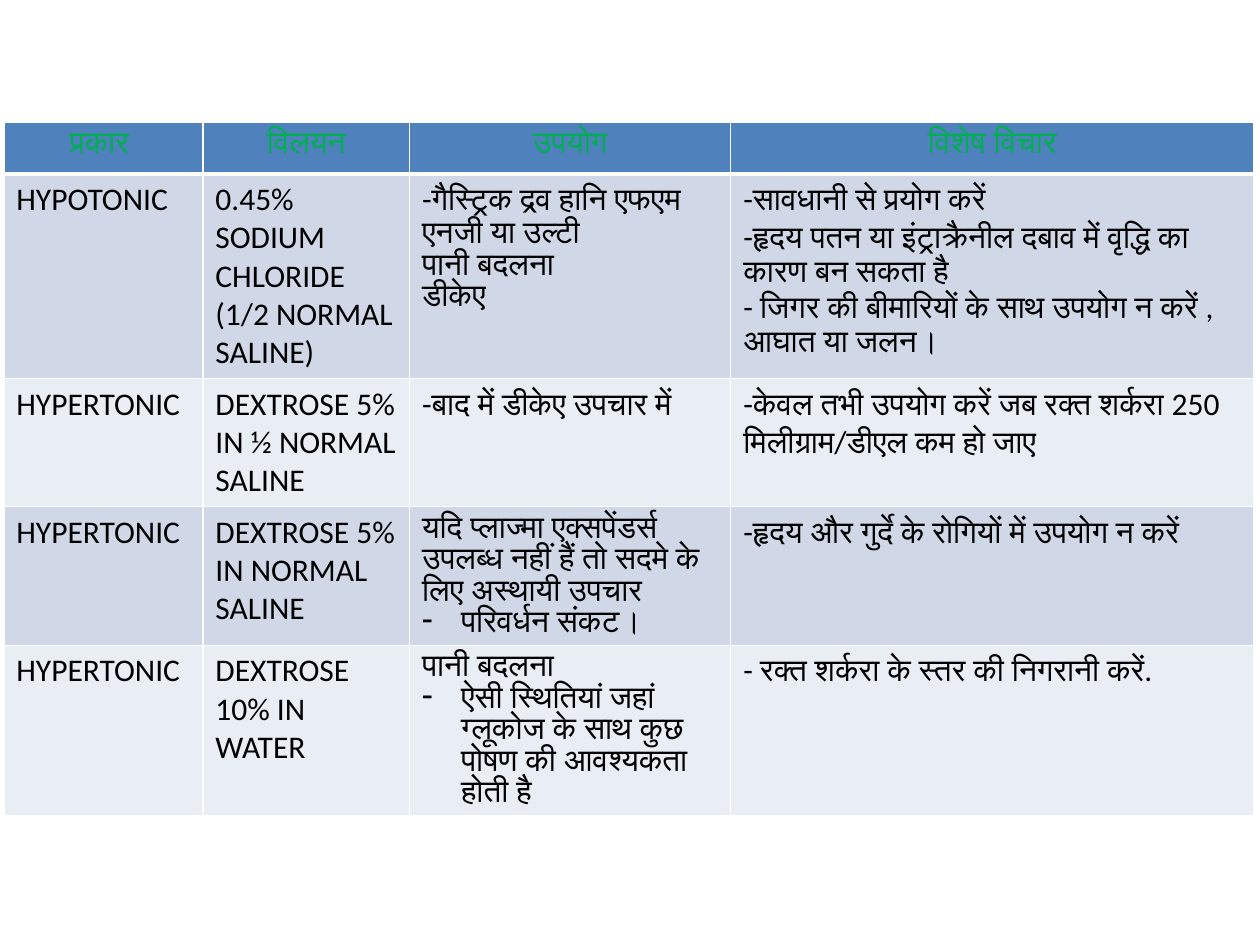
from dataclasses import dataclass

import lxml.etree
import pptx
import pptx.dml.color
import pptx.enum.text
import pptx.oxml
import pptx.oxml.ns
import pptx.util


@dataclass(frozen=True)
class Theme:
    font: str = "Calibri"
    size: int = 18
    header_text: str = "00B050"
    body_text: str = "000000"
    header_fill: str = "4F81BD"
    bands: tuple = ("D0D8E8", "E9EDF4")
    border: str = "FFFFFF"
    thin: int = 1
    thick: int = 3
    indent: float = 0.31


@dataclass(frozen=True)
class Bullet:
    text: str


HEADERS = ["प्रकार ", "विलयन", "उपयोग", "विशेष विचार"]
FLUIDS = [
    ["HYPOTONIC",
     "0.45% SODIUM CHLORIDE (1/2 NORMAL SALINE)",
     ["-गैस्ट्रिक द्रव हानि एफएम एनजी या उल्टी ", "पानी बदलना ", "डीकेए"],
     ["-सावधानी से प्रयोग करें",
      "-हृदय पतन या इंट्राक्रैनील दबाव में वृद्धि का कारण बन सकता है ",
      "- जिगर की बीमारियों के साथ उपयोग न करें , आघात या जलन।"]],
    ["HYPERTONIC",
     "DEXTROSE 5% IN ½ NORMAL SALINE",
     "-बाद में डीकेए उपचार में",
     "-केवल तभी उपयोग करें जब रक्त शर्करा 250 मिलीग्राम/डीएल कम हो जाए"],
    ["HYPERTONIC",
     "DEXTROSE 5% IN NORMAL SALINE",
     ["यदि प्लाज्मा एक्सपेंडर्स उपलब्ध नहीं हैं तो सदमे के लिए अस्थायी उपचार",
      Bullet("परिवर्धन संकट।")],
     "-हृदय और गुर्दे के रोगियों में उपयोग न करें"],
    ["HYPERTONIC",
     "DEXTROSE 10% IN WATER",
     ["पानी बदलना ",
      Bullet("ऐसी स्थितियां जहां ग्लूकोज के साथ कुछ पोषण की आवश्यकता होती है")],
     "- रक्त शर्करा के स्तर की निगरानी करें."],
]
COLUMN_WIDTHS = [1.58, 1.64, 2.55, 4.15]
ROW_HEIGHT = 0.41


class SlideBuilder:
    def __init__(self, presentation, theme):
        self.theme = theme
        self.slide = presentation.slides.add_slide(presentation.slide_layouts[6])

    def table(self, left, top, height, rows, column_widths, row_height):
        inches = pptx.util.Inches
        frame = self.slide.shapes.add_table(
            len(rows), len(column_widths), inches(left), inches(top),
            inches(sum(column_widths)), inches(height))
        for column, width in zip(frame.table.columns, column_widths):
            column.width = inches(width)
        for row_index, values in enumerate(rows):
            frame.table.rows[row_index].height = inches(row_height)
            for column_index, value in enumerate(values):
                self.cell(frame.table.cell(row_index, column_index), row_index, value)
        frame.height = inches(height)

    def cell(self, cell, row_index, value):
        theme = self.theme
        header = row_index == 0
        self.borders(cell, row_index)
        cell.fill.solid()
        fill = theme.header_fill if header else theme.bands[(row_index - 1) % 2]
        cell.fill.fore_color.rgb = pptx.dml.color.RGBColor.from_string(fill)
        items = value if isinstance(value, list) else [value]
        for index, item in enumerate(items):
            text_frame = cell.text_frame
            paragraph = text_frame.add_paragraph() if index else text_frame.paragraphs[0]
            self.paragraph(paragraph, item, header)

    def borders(self, cell, row_index):
        theme = self.theme
        properties = cell._tc.get_or_add_tcPr()
        widths = {
            "lnL": theme.thin,
            "lnR": theme.thin,
            "lnT": theme.thick if row_index == 1 else theme.thin,
            "lnB": theme.thick if row_index == 0 else theme.thin,
        }
        for side, width in widths.items():
            properties.append(pptx.oxml.parse_xml(
                f'<a:{side} {pptx.oxml.ns.nsdecls("a")} w="{pptx.util.Pt(width)}">'
                f'<a:solidFill><a:srgbClr val="{theme.border}"/></a:solidFill></a:{side}>'))

    def paragraph(self, paragraph, item, header):
        theme = self.theme
        text = item
        if isinstance(item, Bullet):
            text = item.text
            self.bullet(paragraph)
        if header:
            paragraph.alignment = pptx.enum.text.PP_ALIGN.CENTER
        run = paragraph.add_run()
        run.text = text
        run.font.name = theme.font
        run.font.size = pptx.util.Pt(theme.size)
        run.font.bold = False
        color = theme.header_text if header else theme.body_text
        run.font.color.rgb = pptx.dml.color.RGBColor.from_string(color)

    def bullet(self, paragraph):
        properties = paragraph._p.get_or_add_pPr()
        indent = pptx.util.Inches(self.theme.indent)
        properties.set("marL", str(indent))
        properties.set("indent", str(-indent))
        mark = lxml.etree.SubElement(properties, pptx.oxml.ns.qn("a:buChar"))
        mark.set("char", "-")


def main():
    presentation = pptx.Presentation()
    presentation.slide_width = pptx.util.Inches(10)
    presentation.slide_height = pptx.util.Inches(7.5)
    builder = SlideBuilder(presentation, Theme())
    builder.table(0.03, 0.97, 6.51, [HEADERS, *FLUIDS], COLUMN_WIDTHS, ROW_HEIGHT)
    presentation.save("out.pptx")


if __name__ == "__main__":
    main()
